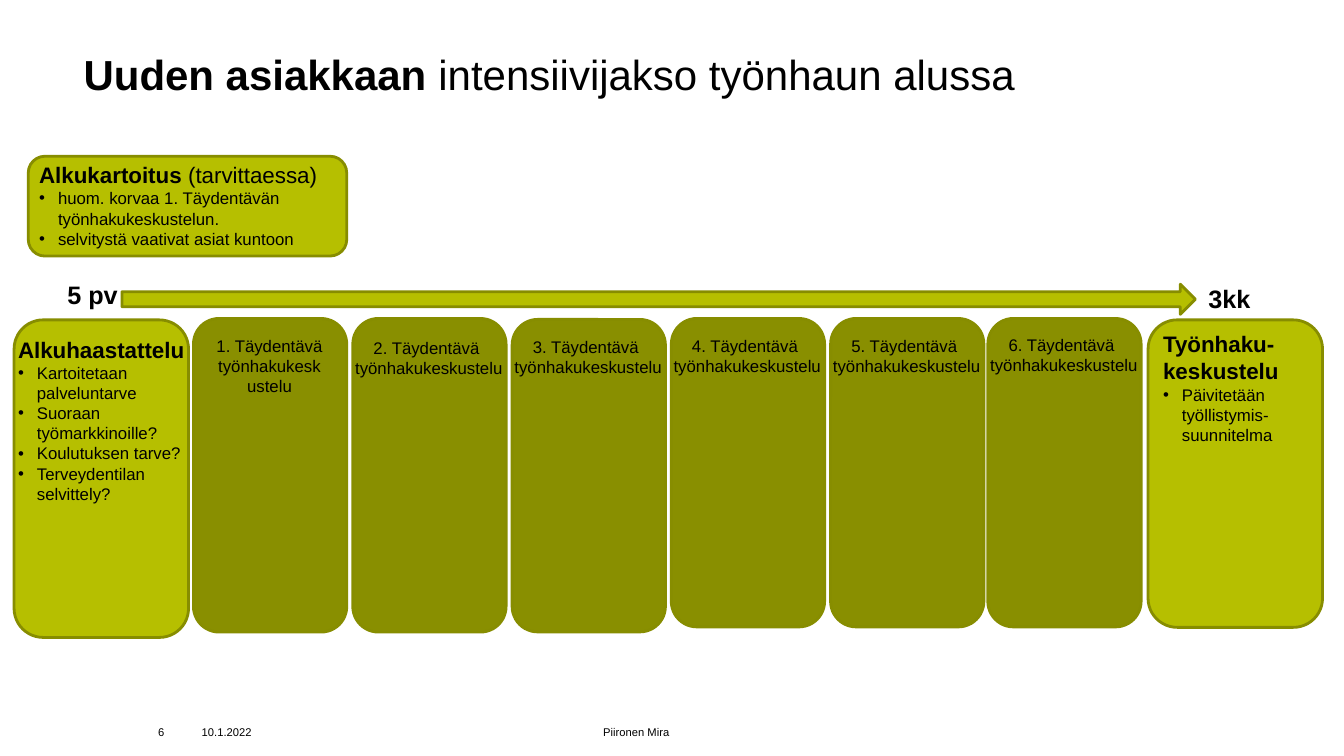
import pptx
import pptx.util
import pptx.dml.color
import pptx.enum.shapes
import pptx.enum.text
from lxml import etree

Pt = pptx.util.Pt
RGBColor = pptx.dml.color.RGBColor
MSO_SHAPE = pptx.enum.shapes.MSO_SHAPE
PP_ALIGN = pptx.enum.text.PP_ALIGN
MSO_ANCHOR = pptx.enum.text.MSO_ANCHOR

LIME = RGBColor(0xB6, 0xBF, 0x00)
OLIVE = RGBColor(0x89, 0x8F, 0x00)
EDGE = RGBColor(0x87, 0x8D, 0x00)
BLACK = RGBColor(0, 0, 0)


class Deck:
    font = "Arial"
    indent = 13.5

    def __init__(self, width, height):
        self.prs = pptx.Presentation()
        self.prs.slide_width = Pt(width)
        self.prs.slide_height = Pt(height)
        self.s = self.prs.slides.add_slide(self.prs.slide_layouts[6])

    def shape(self, kind, x, y, w, h, fill):
        sp = self.s.shapes.add_shape(kind, Pt(x), Pt(y), Pt(w), Pt(h))
        sp.shadow.inherit = False
        sp.fill.solid()
        sp.fill.fore_color.rgb = fill
        sp.line.color.rgb = EDGE
        sp.line.width = Pt(2)
        return sp

    def text(self, x, y, w, h, wrap=True):
        sp = self.s.shapes.add_textbox(Pt(x), Pt(y), Pt(w), Pt(h))
        tf = sp.text_frame
        tf.word_wrap = wrap
        return tf

    def paragraph(self, tf, runs, size, align=PP_ALIGN.LEFT, bullet=False):
        first = tf.paragraphs[0]
        p = tf.add_paragraph() if first.runs else first
        p.alignment = align
        if bullet:
            pPr = p._p.get_or_add_pPr()
            pPr.set("marL", str(Pt(self.indent)))
            pPr.set("indent", str(-Pt(self.indent)))
            ns = pPr.nsmap["a"]
            etree.SubElement(pPr, f"{{{ns}}}buFont", typeface=self.font)
            etree.SubElement(pPr, f"{{{ns}}}buChar", char="•")
        for words, bold in runs:
            r = p.add_run()
            r.text = words
            r.font.name = self.font
            r.font.size = Pt(size)
            r.font.bold = bold
            r.font.color.rgb = BLACK

    def card(self, panel, box, headings, bullets):
        self.shape(MSO_SHAPE.ROUNDED_RECTANGLE, *panel, LIME)
        tf = self.text(*box)
        for runs in headings:
            self.paragraph(tf, runs, 16)
        for words in bullets:
            self.paragraph(tf, [(words, False)], 12, bullet=True)

    def step(self, number, x, y, h, text_y):
        w = 109.5
        self.shape(MSO_SHAPE.ROUNDED_RECTANGLE, x, y, w, h, OLIVE)
        narrow = number == 1
        text_w = 91.5 if narrow else 120
        tf = self.text(x + (w - text_w) / 2 - 0.4, text_y, text_w, 140, narrow)
        for words in (f"{number}. Täydentävä ", "työnhakukeskustelu"):
            self.paragraph(tf, [(words, False)], 12, PP_ALIGN.CENTER)

    def label(self, words, x, y, w):
        tf = self.text(x, y, w, 29, False)
        self.paragraph(tf, [(words, True)], 18)

    def footer(self, words, x, w, align):
        tf = self.text(x, 515.5, w, 15)
        tf.margin_left = tf.margin_right = tf.margin_top = tf.margin_bottom = 0
        tf.vertical_anchor = MSO_ANCHOR.MIDDLE
        self.paragraph(tf, [(words, False)], 8, align)


def main():
    deck = Deck(960, 540)

    title = deck.text(52.6, 31, 735, 88)
    deck.paragraph(title, [("Uuden asiakkaan ", True),
                           ("intensiivijakso työnhaun alussa", False)], 30)

    deck.footer("6", 79, 38.5, PP_ALIGN.RIGHT)
    deck.footer("10.1.2022", 118, 88, PP_ALIGN.CENTER)
    deck.footer("Piironen Mira", 206, 497, PP_ALIGN.CENTER)

    deck.card((20.2, 111.6, 227.5, 71.3), (20.9, 111.6, 224, 70.6),
              [[("Alkukartoitus ", True), ("(tarvittaessa)", False)]],
              ["huom. korvaa 1. Täydentävän työnhakukeskustelun.",
               "selvitystä vaativat asiat kuntoon"])
    deck.card((10.1, 228.5, 124.6, 226.8), (5.8, 236.2, 136.8, 108.7),
              [[("Alkuhaastattelu", True)]],
              ["Kartoitetaan palveluntarve", "Suoraan työmarkkinoille?",
               "Koulutuksen tarve?", "Terveydentilan selvittely?"])

    steps = [(138.2, 227.5, 224, 236.2), (252, 227.5, 224, 237.6),
             (365.8, 228.2, 223.2, 236.9), (479.5, 227.5, 220.3, 236.2),
             (593.3, 227.5, 220.3, 236.2), (705.6, 227.5, 220.3, 235.4)]
    for number, place in enumerate(steps, 1):
        deck.step(number, *place)

    deck.card((820.1, 228.5, 124.6, 219.6), (823.7, 232.6, 130.3, 104.4),
              [[("Työnhaku-", True)], [("keskustelu", True)]],
              ["Päivitetään työllistymis-suunnitelma"])

    deck.label("3kk", 856.1, 198.7, 44.6)
    deck.label("5 pv", 41, 195.8, 51.1)
    deck.shape(MSO_SHAPE.RIGHT_ARROW, 87.1, 203, 766.8, 21.6, LIME)

    deck.prs.save("out.pptx")


if __name__ == "__main__":
    main()
